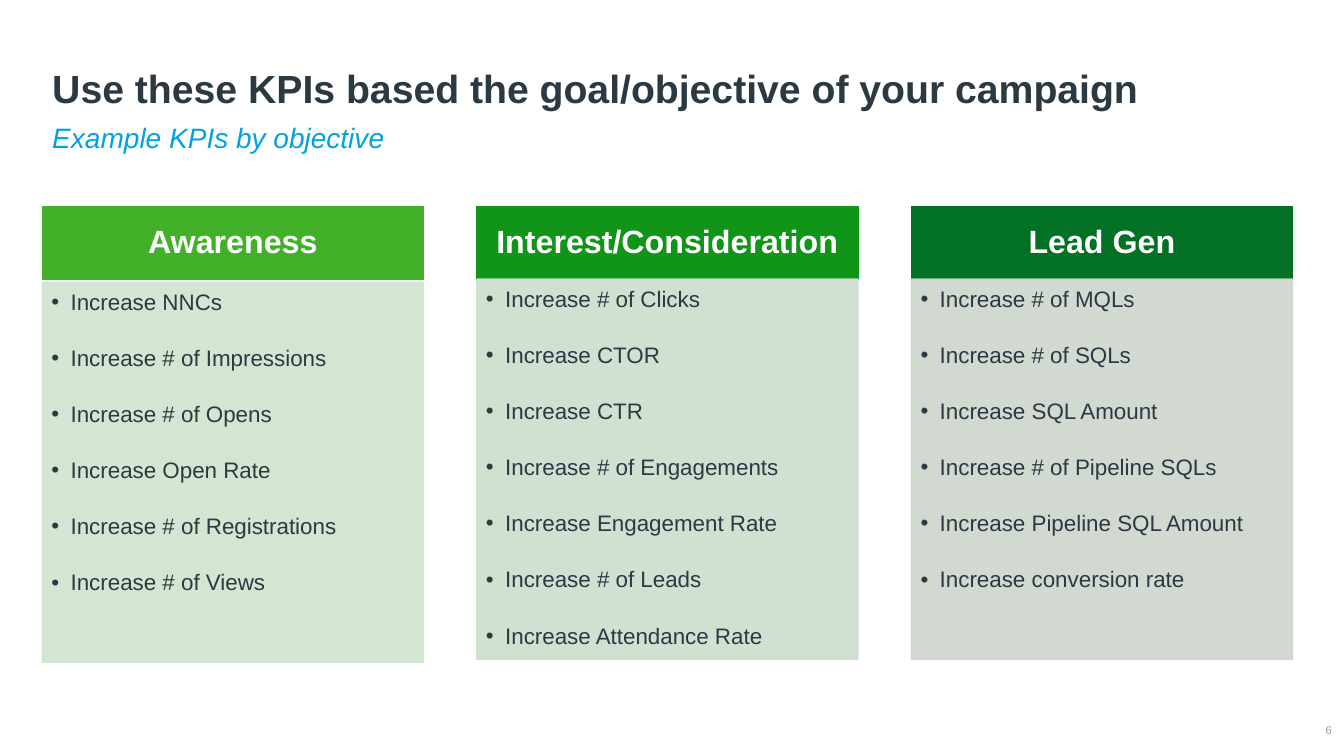
import pptx
import pptx.util
from lxml import etree
from pptx.dml.color import RGBColor
from pptx.enum.shapes import MSO_SHAPE
from pptx.enum.text import MSO_ANCHOR, PP_ALIGN
from pptx.oxml.ns import qn

SLIDE_W, SLIDE_H = 13.33, 7.5
MARGIN, CONTENT_W = 0.42, 12.4
COLUMN_GAP = 0.53
COLUMNS_TOP, HEADER_H, LIST_H = 2.05, 0.72, 3.77

INK = RGBColor(0x2B, 0x3A, 0x42)
SKY = RGBColor(0x00, 0xA3, 0xE0)
GREY = RGBColor(0x95, 0x9C, 0xA0)
WHITE = RGBColor(0xFF, 0xFF, 0xFF)
LIGHT_GREEN = RGBColor(0x43, 0xB0, 0x2A)
MID_GREEN = RGBColor(0x11, 0x95, 0x19)
DARK_GREEN = RGBColor(0x02, 0x71, 0x23)
PALE_GREEN = RGBColor(0xCF, 0xE4, 0xCD)
PALE_SAGE = RGBColor(0xCC, 0xDD, 0xCC)
PALE_GREY = RGBColor(0xCC, 0xD5, 0xCD)

# heading, header colour, list colour, gap under the header, KPIs
OBJECTIVES = [
    ("Awareness", LIGHT_GREEN, PALE_GREEN, 0.03,
     ["Increase NNCs", "Increase # of Impressions", "Increase # of Opens",
      "Increase Open Rate", "Increase # of Registrations",
      "Increase # of Views"]),
    ("Interest/Consideration", MID_GREEN, PALE_SAGE, 0,
     ["Increase # of Clicks", "Increase CTOR", "Increase CTR",
      "Increase # of Engagements", "Increase Engagement Rate",
      "Increase # of Leads", "Increase Attendance Rate"]),
    ("Lead Gen", DARK_GREEN, PALE_GREY, 0,
     ["Increase # of MQLs", "Increase # of SQLs", "Increase SQL Amount",
      "Increase # of Pipeline SQLs", "Increase Pipeline SQL Amount",
      "Increase conversion rate"]),
]


def inches(*lengths):
    return [pptx.util.Inches(length) for length in lengths]


def set_frame(tf, insets, anchor):
    """Wrap the text and set its insets (left, top, right, bottom) and anchor."""
    tf.word_wrap = True
    tf.vertical_anchor = anchor
    (tf.margin_left, tf.margin_top,
     tf.margin_right, tf.margin_bottom) = inches(*insets)


def format_paragraph(p, size, color, bold=False, italic=False,
                     align=PP_ALIGN.LEFT):
    p.alignment = align
    p.line_spacing = 0.9
    for r in p.runs:
        r.font.name = "Arial"
        r.font.size = pptx.util.Pt(size)
        r.font.color.rgb = color
        r.font.bold = bold
        r.font.italic = italic


def add_line_of_text(s, text, box, size, color, anchor=MSO_ANCHOR.TOP,
                     insets=(0.1, 0.05, 0.1, 0.05), **style):
    tf = s.shapes.add_textbox(*inches(*box)).text_frame
    set_frame(tf, insets, anchor)
    tf.text = text
    format_paragraph(tf.paragraphs[0], size, color, **style)


def add_panel(s, box, color, opacity=100):
    """Add a rectangle whose fill and outline share a colour and opacity."""
    sp = s.shapes.add_shape(MSO_SHAPE.RECTANGLE, *inches(*box))
    sp.shadow.inherit = False
    sp.fill.solid()
    sp.fill.fore_color.rgb = color
    sp.line.color.rgb = color
    sp.line.width = pptx.util.Pt(1)
    if opacity < 100:
        for clr in sp.element.spPr.iter(qn("a:srgbClr")):
            etree.SubElement(clr, qn("a:alpha")).set("val", str(opacity * 1000))
    return sp


def add_bullet(p):
    pPr = p._p.get_or_add_pPr()
    indent = pptx.util.Inches(0.19)
    pPr.set("marL", str(indent))
    pPr.set("indent", str(-indent))
    etree.SubElement(pPr, qn("a:buFont")).set("typeface", "Arial")
    etree.SubElement(pPr, qn("a:buChar")).set("char", "•")


def add_objective(s, left, top, width, objective):
    heading, header_color, list_color, gap, kpis = objective

    tf = add_panel(s, (left, top, width, HEADER_H), header_color).text_frame
    set_frame(tf, (0.18, 0.1, 0.18, 0.1), MSO_ANCHOR.MIDDLE)
    tf.text = heading
    format_paragraph(tf.paragraphs[0], 23, WHITE, bold=True,
                     align=PP_ALIGN.CENTER)

    list_box = (left, top + HEADER_H + gap, width, LIST_H)
    tf = add_panel(s, list_box, list_color, opacity=90).text_frame
    set_frame(tf, (0.09, 0.09, 0.12, 0.14), MSO_ANCHOR.TOP)
    tf.text = "\n".join(kpis)
    for p in tf.paragraphs:
        add_bullet(p)
        format_paragraph(p, 16, INK)
        p.space_after = pptx.util.Pt(22.8)


def add_heading(s, left, top, width):
    add_line_of_text(
        s, "Use these KPIs based the goal/objective of your campaign",
        (left, top, width, 0.84), 28, INK, MSO_ANCHOR.BOTTOM, bold=True)
    add_line_of_text(s, "Example KPIs by objective",
                     (left, top + 0.86, width, 0.44), 20, SKY, italic=True)


def main():
    prs = pptx.Presentation()
    prs.slide_width, prs.slide_height = inches(SLIDE_W, SLIDE_H)
    s = prs.slides.add_slide(prs.slide_layouts[6])

    add_heading(s, MARGIN, 0.32, CONTENT_W)
    count = len(OBJECTIVES)
    column_w = (CONTENT_W - (count - 1) * COLUMN_GAP) / count
    for i, objective in enumerate(OBJECTIVES):
        left = MARGIN + i * (column_w + COLUMN_GAP)
        add_objective(s, left, COLUMNS_TOP, column_w, objective)
    add_line_of_text(s, "6", (12.82, 7.16, 0.39, 0.19), 8, GREY,
                     MSO_ANCHOR.MIDDLE, (0, 0, 0, 0), align=PP_ALIGN.RIGHT)

    prs.save("out.pptx")


if __name__ == "__main__":
    main()
